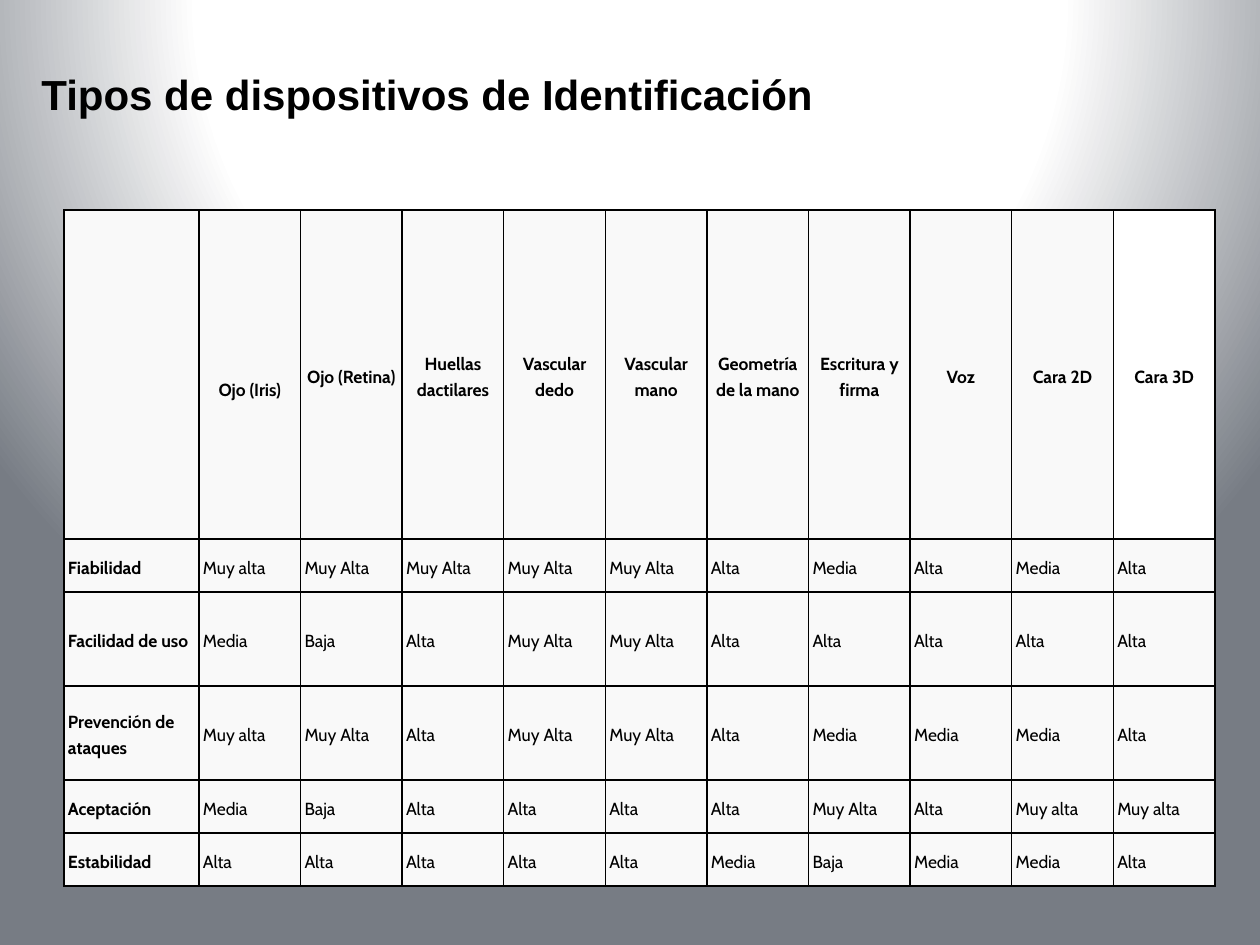
"""Build a slide that compares biometric identification devices in a table."""
import pptx
import pptx.dml.color
import pptx.enum.text
import pptx.oxml
import pptx.oxml.ns
import pptx.util

PX = 914400 / 126
NS = pptx.oxml.ns.nsdecls("a", "p")
MID = pptx.enum.text.MSO_ANCHOR.MIDDLE
ALIGN = pptx.enum.text.PP_ALIGN


def paint(code):
    return pptx.dml.color.RGBColor.from_string(code)


def write(frame, text, size=10, font="Cabin", bold=False, align=ALIGN.LEFT, line=None, after=0):
    para = frame.paragraphs[0]
    para.text = text
    para.alignment = align
    para.space_after = pptx.util.Pt(after)
    if line:
        para.line_spacing = pptx.util.Pt(line)
    for run in para.runs:
        run.font.size = pptx.util.Pt(size)
        run.font.name = font
        run.font.bold = bold
        run.font.color.rgb = paint("000000")


deck = pptx.Presentation()
deck.slide_width = int(1260 * PX)
deck.slide_height = int(945 * PX)
slide = deck.slides.add_slide(deck.slide_layouts[6])

stops = "".join(
    f'<a:gs pos="{pos}000"><a:srgbClr val="{code}"/></a:gs>'
    for pos, code in [(0, "FFFFFF"), (55, "FFFFFF"), (100, "777C84")]
)
back = pptx.oxml.parse_xml(
    f'<p:bg {NS}><p:bgPr><a:gradFill rotWithShape="1"><a:gsLst>{stops}</a:gsLst>'
    '<a:path path="circle"><a:fillToRect l="50000" t="-80000" r="50000" b="180000"/></a:path>'
    "</a:gradFill><a:effectLst/></p:bgPr></p:bg>"
)
slide.element.cSld.insert(0, back)

title = slide.shapes.add_textbox(*[int(n * PX) for n in (29, 59, 1024, 69)]).text_frame
title.word_wrap = True
title.vertical_anchor = MID
write(title, "Tipos de dispositivos de Identificación", size=24, font="Arial", bold=True)

heads = [
    "", "\vOjo (Iris)", "Ojo (Retina)", "Huellas dactilares", "Vascular dedo", "Vascular mano",
    "Geometría de la mano", "Escritura y firma", "Voz", "Cara 2D", "Cara 3D",
]
rates = [
    "Fiabilidad|Muy alta|Muy Alta|Muy Alta|Muy Alta|Muy Alta|Alta|Media|Alta|Media|Alta",
    "Facilidad de uso|Media|Baja|Alta|Muy Alta|Muy Alta|Alta|Alta|Alta|Alta|Alta",
    "Prevención de ataques|Muy alta|Muy Alta|Alta|Muy Alta|Muy Alta|Alta|Media|Media|Media|Alta",
    "Aceptación|Media|Baja|Alta|Alta|Alta|Alta|Muy Alta|Alta|Muy alta|Muy alta",
    "Estabilidad|Alta|Alta|Alta|Alta|Alta|Media|Baja|Media|Media|Alta",
]
rows = [heads] + [rate.split("|") for rate in rates]
highs = [329, 53, 94, 94, 53, 53]
first, rest = 135, 1016

box = [int(n * PX) for n in (64, 210, first + rest, sum(highs))]
table = slide.shapes.add_table(len(rows), len(heads), *box).table
table.first_row = table.horz_banding = False
for i, col in enumerate(table.columns):
    col.width = int((rest / (len(heads) - 1) if i else first) * PX)
for row, high in zip(table.rows, highs):
    row.height = int(high * PX)

for r, row in enumerate(rows):
    for c, text in enumerate(row):
        cell = table.cell(r, c)
        last = text == heads[-1]
        inset = 0 if last else int(4 * PX)
        cell.margin_left = cell.margin_right = cell.margin_top = cell.margin_bottom = inset
        cell.vertical_anchor = MID
        if text:
            write(cell.text_frame, text, bold=r == 0 or c == 0, line=15, after=7.5,
                  align=ALIGN.LEFT if r else ALIGN.CENTER)
        props = cell._tc.get_or_add_tcPr()
        for side in ("lnL", "lnR", "lnT", "lnB"):
            props.append(pptx.oxml.parse_xml(
                f'<a:{side} {NS} w="12700"><a:solidFill><a:srgbClr val="000000"/></a:solidFill></a:{side}>'
            ))
        cell.fill.solid()
        cell.fill.fore_color.rgb = paint("FFFFFF" if last else "F9F9F9")

deck.save("out.pptx")
